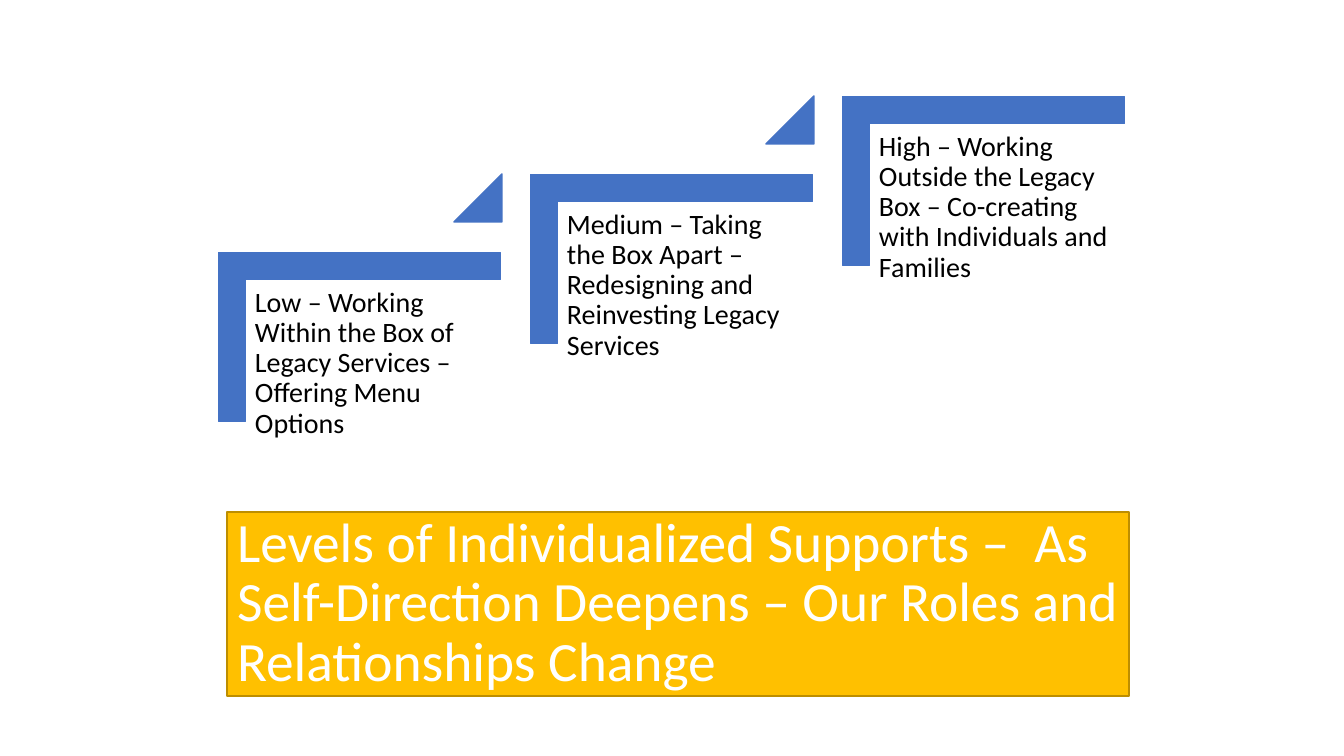
from pptx import Presentation
from pptx.dml.color import RGBColor
from pptx.enum.shapes import MSO_SHAPE as Preset
from pptx.enum.text import MSO_ANCHOR as Anchor, MSO_AUTO_SIZE as AutoSize, PP_ALIGN as Align
from pptx.util import Emu, Pt

# Content
TITLE = ("Levels of Individualized Supports –  As Self-Direction Deepens – "
         "Our Roles and Relationships Change")
LEVELS = [
    "Low – Working Within the Box of Legacy Services – Offering Menu Options",
    "Medium – Taking the Box Apart – Redesigning and Reinvesting Legacy Services",
    "High – Working Outside the Legacy Box – Co-creating with Individuals and Families",
]
FONT = "Calibri"
BLUE, GOLD, DARK_GOLD = "4472C4", "FFC000", "BD8E00"
BLACK, WHITE = "000000", "FFFFFF"

# Layout in px: left, top, width, height of the lowest step, then the shift per step
CORNER = (275, 196, 169, 282)
LABEL = (247, 280, 255, 224)
TRIANGLE = (454, 174, 48, 48)
TITLE_BOX = (227, 512, 902, 184)
STEP_X, STEP_Y = 312, -78
INSET = 8
EMU_PER_PX = 914400 / 100.8


def px(length):
    return Emu(round(length * EMU_PER_PX))


def color(hex_code):
    return RGBColor.from_string(hex_code)


def place(box, step):
    left, top, width, height = box
    return [px(n) for n in (left + step * STEP_X, top + step * STEP_Y, width, height)]


def paint(shape, fill, line):
    shape.fill.solid()
    shape.fill.fore_color.rgb = color(fill)
    shape.line.color.rgb = color(line)
    shape.line.width = Pt(1)


def write(frame, text, size, font_color):
    frame.text = text
    frame.word_wrap = True
    frame.auto_size = AutoSize.NONE
    para = frame.paragraphs[0]
    para.alignment = Align.LEFT
    para.line_spacing = 0.9
    font = para.runs[0].font
    font.name, font.size = FONT, Pt(size)
    font.color.rgb = color(font_color)


def add_blue(preset, box, step, adjustments):
    shape = slide.shapes.add_shape(preset, *place(box, step))
    shape.shadow.inherit = False
    paint(shape, BLUE, BLUE)
    for index, value in enumerate(adjustments):
        shape.adjustments[index] = value
    return shape


deck = Presentation()
deck.slide_width, deck.slide_height = px(1344), px(756)
slide = deck.slides.add_slide(deck.slide_layouts[5])

# Rising steps, with a triangle leading to each next one
for step, text in enumerate(LEVELS):
    add_blue(Preset.CORNER, CORNER, step, (0.161, 0.161)).rotation = 90
    label = slide.shapes.add_textbox(*place(LABEL, step))
    frame = label.text_frame
    write(frame, text, 20, BLACK)
    frame.margin_left = frame.margin_right = px(INSET)
    frame.margin_top = frame.margin_bottom = px(INSET)
    if step < len(LEVELS) - 1:
        add_blue(Preset.ISOSCELES_TRIANGLE, TRIANGLE, step, (1,))

# Title banner
title = slide.shapes.title
title.left, title.top, title.width, title.height = place(TITLE_BOX, 0)
paint(title, GOLD, DARK_GOLD)
write(title.text_frame, TITLE, 39.6, WHITE)
title.text_frame.vertical_anchor = Anchor.MIDDLE

deck.save("out.pptx")
